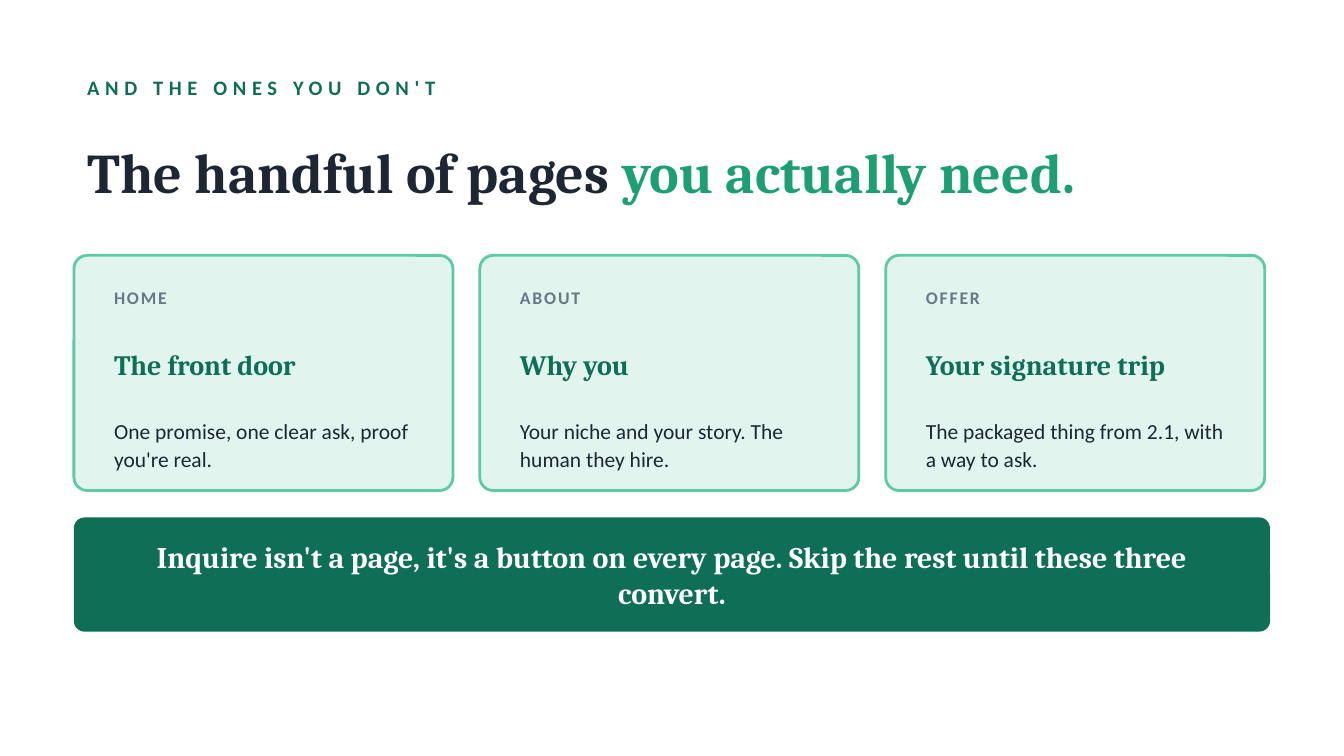
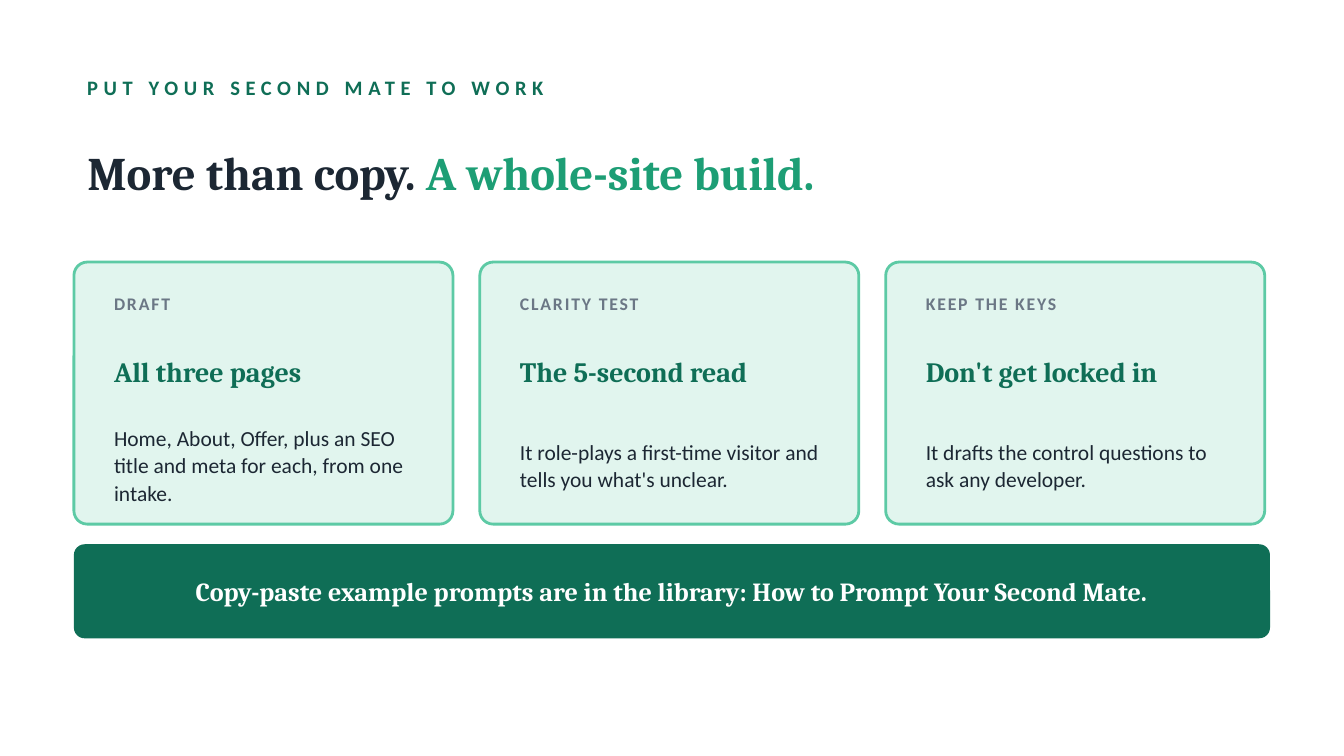
from pptx import Presentation
from pptx.dml.color import RGBColor
from pptx.enum.shapes import MSO_SHAPE
from pptx.enum.text import MSO_ANCHOR, MSO_AUTO_SIZE, PP_ALIGN
from pptx.util import Inches, Pt

ROUND = MSO_SHAPE.ROUNDED_RECTANGLE
MIDDLE = MSO_ANCHOR.MIDDLE
FIXED = MSO_AUTO_SIZE.NONE
LEFT, CENTER = PP_ALIGN.LEFT, PP_ALIGN.CENTER

# Palette and fonts
INK, GRAY, WHITE = "1C2733", "6B7785", "FFFFFF"
DEEP, GREEN, MINT, PALE = "0F6E56", "1D9E75", "5DCAA5", "E1F5EE"
SERIF, SANS = "Cambria", "Calibri"

# Grid of tenth-inch cells
COLS, ROWS = 100, 56.25
EDGE, SPAN = 5.5, 89
CARD, GAP, PAD = 28.2, 2, 2


def color(code):
    return RGBColor.from_string(code)


def cell(count):
    return Inches(count / 10)


class Deck:
    def __init__(self):
        self.prs = Presentation()
        self.prs.slide_width = cell(COLS)
        self.prs.slide_height = cell(ROWS)
        self.slide = None

    def page(self):
        self.slide = self.prs.slides.add_slide(self.prs.slide_layouts[5])
        fill = self.slide.background.fill
        fill.solid()
        fill.fore_color.rgb = color(WHITE)

    def label(self, box, runs, size, face, bold=True, track=0, align=LEFT, lead=None):
        frame = box.text_frame
        frame.word_wrap = True
        frame.auto_size = FIXED
        frame.vertical_anchor = MIDDLE
        para = frame.paragraphs[0]
        para.alignment = align
        if lead:
            para.line_spacing = lead
        for words, tint in runs:
            run = para.add_run()
            run.text = words
            font = run.font
            font.name, font.size, font.bold = face, Pt(size), bold
            font.color.rgb = color(tint)
            if track:
                run._r.get_or_add_rPr().set("spc", str(track * 100))

    def text(self, x, y, w, h, words, tint, size, face, **style):
        box = self.slide.shapes.add_textbox(*map(cell, (x, y, w, h)))
        self.label(box, [(words, tint)], size, face, **style)

    def title(self, runs, size):
        box = self.slide.shapes.title
        box.left, box.top, box.width, box.height = map(cell, (EDGE, 8.5, SPAN, 8.5))
        self.label(box, runs, size, SERIF)

    def panel(self, x, y, w, h, fill, radius, line=None):
        box = self.slide.shapes.add_shape(ROUND, *map(cell, (x, y, w, h)))
        box.adjustments[0] = radius / h
        box.shadow.inherit = False
        box.fill.solid()
        box.fill.fore_color.rgb = color(fill)
        if line:
            box.line.color.rgb = color(line)
            box.line.width = Pt(1.5)
        else:
            box.line.fill.background()

    def card(self, x, y, h, tag, head, body):
        self.panel(x, y, CARD, h, PALE, 1, MINT)
        left, wide = x + PAD, 24.5
        self.text(left, y + 1.6, wide, 3, tag, GRAY, 9.5, SANS, track=1)
        self.text(left, y + 4.6, wide, 7, head, DEEP, 15, SERIF)
        self.text(left, y + 11.8, wide, h - 13, body, INK, 11.5, SANS,
                  bold=False, lead=1.08)

    def cards(self, y, h, items):
        for i, item in enumerate(items):
            self.card(EDGE + i * (CARD + GAP), y, h, *item)

    def band(self, y, h, words, size):
        self.panel(EDGE, y, SPAN, h, DEEP, 0.8)
        self.text(EDGE + 2.5, y, SPAN - 5, h, words, WHITE, size, SERIF, align=CENTER)

    def intro(self, kicker, lead, accent, size):
        self.page()
        self.text(EDGE, 5, SPAN, 3, kicker, DEEP, 11, SANS, track=3)
        self.title([(lead, INK), (accent, GREEN)], size)


def main():
    deck = Deck()

    # Slide 1: pages to have
    deck.intro("AND THE ONES YOU DON'T", "The handful of pages ",
               "you actually need.", 30)
    deck.cards(19, 17.5, [
        ("HOME", "The front door", "One promise, one clear ask, proof you're real."),
        ("ABOUT", "Why you", "Your niche and your story. The human they hire."),
        ("OFFER", "Your signature trip",
         "The packaged thing from 2.1, with a way to ask."),
    ])
    deck.band(38.5, 8.5, "Inquire isn't a page, it's a button on every page. "
              "Skip the rest until these three convert.", 16)

    # Slide 2: site build
    deck.intro("PUT YOUR SECOND MATE TO WORK", "More than copy. ",
               "A whole-site build.", 25)
    deck.cards(19.5, 19.5, [
        ("DRAFT", "All three pages",
         "Home, About, Offer, plus an SEO title and meta for each, from one intake."),
        ("CLARITY TEST", "The 5-second read",
         "It role-plays a first-time visitor and tells you what's unclear."),
        ("KEEP THE KEYS", "Don't get locked in",
         "It drafts the control questions to ask any developer."),
    ])
    deck.band(40.5, 7, "Copy-paste example prompts are in the library: "
              "How to Prompt Your Second Mate.", 14)

    deck.prs.save("out.pptx")


if __name__ == "__main__":
    main()
